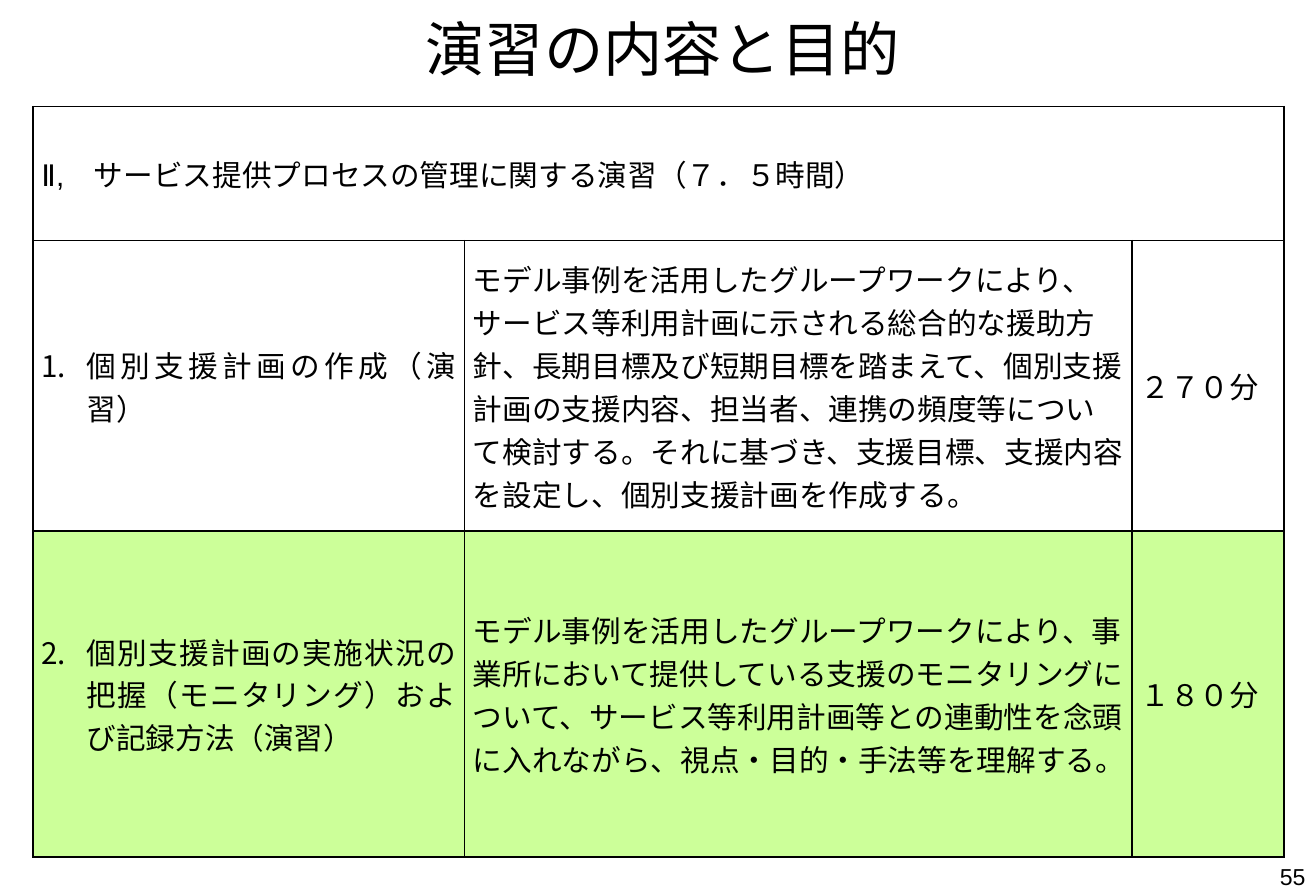
import pptx
import pptx.util
import pptx.dml.color
import pptx.enum.text
import pptx.oxml.ns
import lxml.etree

Inches = pptx.util.Inches
Pt = pptx.util.Pt
ALIGN = pptx.enum.text.PP_ALIGN
ANCHOR = pptx.enum.text.MSO_ANCHOR
qn = pptx.oxml.ns.qn

BLACK = pptx.dml.color.RGBColor(0x00, 0x00, 0x00)
HIGHLIGHT = pptx.dml.color.RGBColor(0xCC, 0xFF, 0x99)


def write(frame, text, size, align):
    frame.word_wrap = True
    paragraph = frame.paragraphs[0]
    paragraph.alignment = align
    run = paragraph.add_run()
    run.text = text
    for name, value in {"name": "Arial", "size": Pt(size)}.items():
        setattr(run.font, name, value)
    run.font.color.rgb = BLACK
    return paragraph


def add_border(properties, side):
    line = lxml.etree.SubElement(properties, qn(f"a:ln{side}"), w=str(Pt(1)))
    fill = lxml.etree.SubElement(line, qn("a:solidFill"))
    lxml.etree.SubElement(fill, qn("a:srgbClr"), val=str(BLACK))


deck = pptx.Presentation()
deck.slide_width = Inches(11.1)
deck.slide_height = Inches(7.5)
slide = deck.slides.add_slide(deck.slide_layouts[6])

page_number = slide.shapes.add_textbox(Inches(8.52), Inches(7.23), Inches(2.59), Inches(0.26))
write(page_number.text_frame, "55", 14, ALIGN.RIGHT)

column_widths = [3.64, 5.63, 1.28]
row_heights = [1.13, 2.45, 2.75]
programme = [
    ["Ⅱ,\u3000サービス提供プロセスの管理に関する演習（７．５時間）".replace("\u3000", "　"), "", ""],
    [
        "個別支援計画の作成（演習）",
        "モデル事例を活用したグループワークにより、サービス等利用計画に示される総合的な援助方針、"
        "長期目標及び短期目標を踏まえて、個別支援計画の支援内容、担当者、連携の頻度等について検討する。"
        "それに基づき、支援目標、支援内容を設定し、個別支援計画を作成する。",
        "２７０分",
    ],
    [
        "個別支援計画の実施状況の把握（モニタリング）および記録方法（演習）",
        "モデル事例を活用したグループワークにより、事業所において提供している支援のモニタリングについて、"
        "サービス等利用計画等との連動性を念頭に入れながら、視点・目的・手法等を理解する。",
        "１８０分",
    ],
]
programme[0][0] = "Ⅱ,　サービス提供プロセスの管理に関する演習（７．５時間）"
cell_format = {
    "margin_left": Inches(0.07),
    "margin_right": Inches(0.07),
    "margin_top": 0,
    "margin_bottom": 0,
    "vertical_anchor": ANCHOR.MIDDLE,
}

exercises = slide.shapes.add_table(
    len(row_heights), len(column_widths),
    Inches(0.28), Inches(0.9), Inches(sum(column_widths)), Inches(sum(row_heights)),
).table
for column, width in zip(exercises.columns, column_widths):
    column.width = Inches(width)
for row, height in zip(exercises.rows, row_heights):
    row.height = Inches(height)
exercises.cell(0, 0).merge(exercises.cell(0, 2))

for row_index, texts in enumerate(programme):
    for column_index, text in enumerate(texts):
        cell = exercises.cell(row_index, column_index)
        for name, value in cell_format.items():
            setattr(cell, name, value)
        for side in "LRTB":
            add_border(cell._tc.get_or_add_tcPr(), side)
        if row_index == 2:
            cell.fill.solid()
            cell.fill.fore_color.rgb = HIGHLIGHT
        else:
            cell.fill.background()
        if not text:
            continue
        numbered = row_index > 0 and column_index == 0
        paragraph = write(cell.text_frame, text, 18, ALIGN.JUSTIFY if numbered else ALIGN.LEFT)
        if numbered:
            properties = paragraph._p.get_or_add_pPr()
            properties.set("marL", str(Inches(0.38)))
            properties.set("indent", str(-Inches(0.38)))
            lxml.etree.SubElement(
                properties, qn("a:buAutoNum"), type="arabicPeriod", startAt=str(row_index))

title = slide.shapes.add_textbox(Inches(1.14), Inches(0.05), Inches(8.9), Inches(0.71))
write(title.text_frame, "演習の内容と目的", 36, ALIGN.CENTER)

deck.save("out.pptx")
